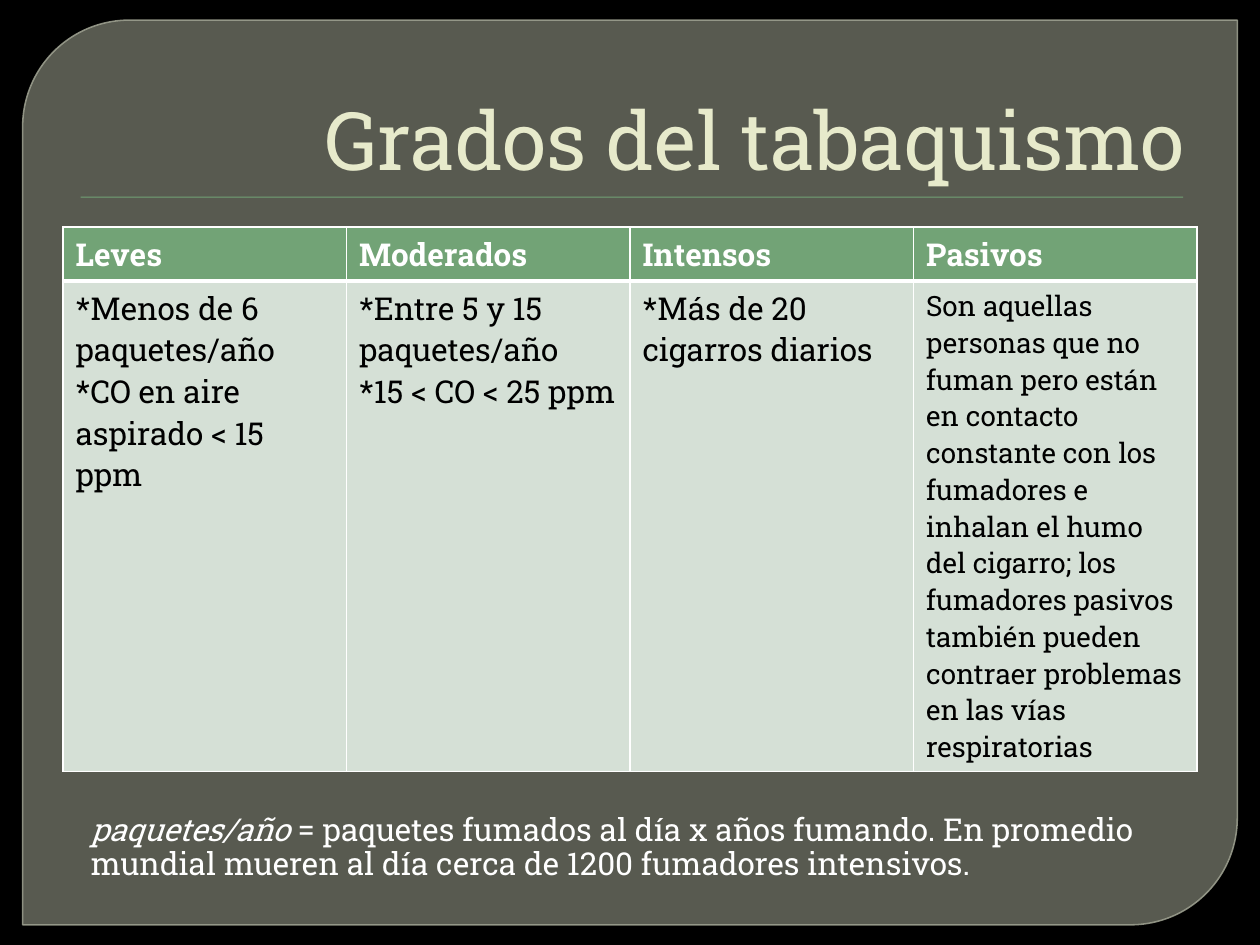
from dataclasses import dataclass

from lxml import etree
from pptx import Presentation
from pptx.dml.color import RGBColor
from pptx.enum import shapes, text
from pptx.oxml import ns
from pptx.util import Inches, Pt


@dataclass(frozen=True)
class Theme:
    font: str = "Roboto Slab"
    background: str = "000000"
    panel: str = "888B7B"
    panel_line: str = "9DA090"
    accent: str = "72A376"
    cell: str = "D5E0D6"
    title: str = "E7EACB"
    light: str = "FFFFFF"
    dark: str = "000000"
    title_size: int = 46
    body_size: int = 18
    small_size: int = 16


def add_run(p, content, *, font, size, color, bold=False, italic=False):
    r = p.add_run()
    r.text = content
    r.font.name = font
    r.font.size = Pt(size)
    r.font.color.rgb = RGBColor.from_string(color)
    r.font.bold = bold
    r.font.italic = italic
    return r


class SlideBuilder:
    def __init__(self, slide, theme):
        self.slide = slide
        self.theme = theme
        self.fill(slide.background, theme.background)

    def fill(self, target, color, alpha=None):
        target.fill.solid()
        target.fill.fore_color.rgb = RGBColor.from_string(color)
        if alpha is not None:
            self.set_alpha(target.fill._xPr, alpha)

    def set_alpha(self, parent, percent):
        color = parent.find(f"{ns.qn('a:solidFill')}/{ns.qn('a:srgbClr')}")
        etree.SubElement(color, ns.qn("a:alpha"), val=str(percent * 1000))

    def shape(self, kind, box, color, alpha=None, line=None):
        sp = self.slide.shapes.add_shape(kind, *map(Inches, box))
        sp.shadow.inherit = False
        self.fill(sp, color, alpha)
        if line:
            sp.line.color.rgb = RGBColor.from_string(line)
            sp.line.width = Pt(0.87)
            self.set_alpha(sp.line._ln, 88)
        else:
            sp.line.fill.background()
        return sp

    def title(self, content, box):
        sp = self.slide.shapes.title
        sp.left, sp.top, sp.width, sp.height = map(Inches, box)
        tf = sp.text_frame
        tf.auto_size = text.MSO_AUTO_SIZE.NONE
        tf.vertical_anchor = text.MSO_ANCHOR.BOTTOM
        p = tf.paragraphs[0]
        p.alignment = text.PP_ALIGN.RIGHT
        add_run(p, content, font=self.theme.font, size=self.theme.title_size,
                color=self.theme.title)

    def note(self, runs, box):
        tf = self.slide.shapes.add_textbox(*map(Inches, box)).text_frame
        tf.word_wrap = True
        p = tf.paragraphs[0]
        p.line_spacing = 0.9
        for content, italic in runs:
            add_run(p, content, font=self.theme.font, size=self.theme.body_size,
                    color=self.theme.light, italic=italic)

    def borders(self, cell, bottom):
        tc_pr = cell._tc.get_or_add_tcPr()
        widths = {"lnL": 1, "lnR": 1, "lnT": 1, "lnB": bottom}
        for i, (side, width) in enumerate(widths.items()):
            ln = etree.Element(ns.qn(f"a:{side}"), w=str(Pt(width)))
            solid = etree.SubElement(ln, ns.qn("a:solidFill"))
            etree.SubElement(solid, ns.qn("a:srgbClr"), val=self.theme.light)
            tc_pr.insert(i, ln)

    def cell(self, cell, lines, *, fill, bottom=1, **style):
        self.fill(cell, fill)
        self.borders(cell, bottom)
        tf = cell.text_frame
        for i, line in enumerate(lines):
            p = tf.add_paragraph() if i else tf.paragraphs[0]
            add_run(p, line, font=self.theme.font, **style)

    def table(self, columns, box, header_height):
        t = self.theme
        table = self.slide.shapes.add_table(2, len(columns), *map(Inches, box)).table
        table.rows[0].height = Inches(header_height)
        table.rows[1].height = Inches(box[3] - header_height)
        for i, (heading, size, lines) in enumerate(columns):
            self.cell(table.cell(0, i), [heading], fill=t.accent, bottom=3,
                      size=t.body_size, color=t.light, bold=True)
            self.cell(table.cell(1, i), lines, fill=t.cell, size=size, color=t.dark)


def main():
    prs = Presentation()
    prs.slide_width, prs.slide_height = Inches(10), Inches(7.5)
    theme = Theme()
    builder = SlideBuilder(prs.slides.add_slide(prs.slide_layouts[5]), theme)

    panel = builder.shape(shapes.MSO_SHAPE.ROUND_2_DIAG_RECTANGLE,
                          (0.18, 0.16, 9.64, 7.18), theme.panel,
                          alpha=65, line=theme.panel_line)
    panel.adjustments[0] = 0.118
    rule = builder.shape(shapes.MSO_SHAPE.RECTANGLE, (0.64, 1.56, 8.75, 0.01), theme.accent)
    tree = builder.slide.shapes._spTree
    for i, sp in enumerate((panel, rule)):
        tree.insert(2 + i, sp._element)

    builder.title("Grados del tabaquismo", (0.5, 0.28, 9, 1.25))
    columns = [
        ("Leves", theme.body_size,
         ["*Menos de 6 paquetes/año", "*CO en aire aspirado < 15 ppm"]),
        ("Moderados", theme.body_size,
         ["*Entre 5 y 15 paquetes/año", "*15 < CO < 25 ppm"]),
        ("Intensos", theme.body_size, ["*Más de 20 cigarros diarios"]),
        ("Pasivos", theme.small_size,
         ["Son aquellas personas que no fuman pero están en contacto constante "
          "con los fumadores e inhalan el humo del cigarro; los fumadores pasivos "
          "también pueden contraer problemas en las vías respiratorias"]),
    ]
    builder.table(columns, (0.5, 1.8, 9, 4.32), header_height=0.43)
    builder.note([("paquetes/año", True),
                  (" = paquetes fumados al día x años fumando. En promedio mundial "
                   "mueren al día cerca de 1200 fumadores intensivos.", False)],
                 (0.62, 6.41, 8.52, 1.01))
    prs.save("out.pptx")


if __name__ == "__main__":
    main()
